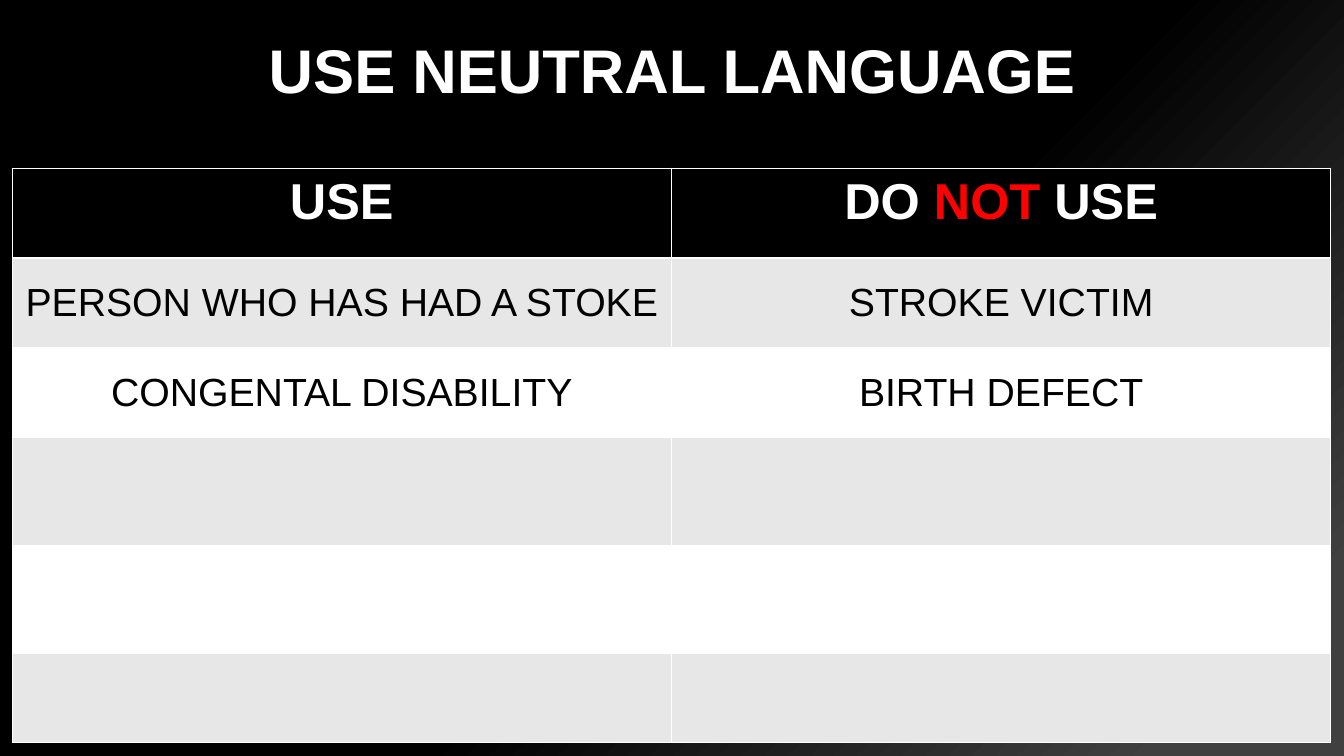
from lxml.etree import SubElement
from pptx import Presentation
from pptx.dml.color import RGBColor
from pptx.enum.text import MSO_ANCHOR, PP_ALIGN
from pptx.oxml.ns import qn
from pptx.util import Inches, Pt

COLORS = {
    "black": "000000",
    "charcoal": "404040",
    "white": "FFFFFF",
    "band": "E7E7E7",
    "alert": "FF0000",
}
FONT = "Arial"
WIDTH, HEIGHT = Inches(13.33), Inches(7.5)

HEADINGS = [
    [("USE", "white")],
    [("DO ", "white"), ("NOT", "alert"), (" USE", "white")],
]
PHRASES = [
    ("PERSON WHO HAS HAD A STOKE", "STROKE VICTIM"),
    ("CONGENTAL DISABILITY", "BIRTH DEFECT"),
    ("", ""),
    ("", ""),
    ("", ""),
]
ROW_HEIGHTS = [0.89, 0.89, 0.89, 1.07, 1.07, 0.89]


def color(name):
    return RGBColor.from_string(COLORS[name])


class SlideBuilder:
    def __init__(self, presentation):
        self.slide = presentation.slides.add_slide(presentation.slide_layouts[5])

    def background(self, start, end):
        """Shade diagonally between two (color name, position) stops."""
        fill = self.slide.background.fill
        fill.gradient()
        fill.gradient_angle = 315
        for stop, (name, position) in zip(fill.gradient_stops, (start, end)):
            stop.color.rgb = color(name)
            stop.position = position

    def centred_text(self, text_frame, parts, size, bold=False):
        """Fill a centred paragraph with (text, color name) runs."""
        paragraph = text_frame.paragraphs[0]
        paragraph.alignment = PP_ALIGN.CENTER
        for text, name in parts:
            run = paragraph.add_run()
            run.text = text
            run.font.name = FONT
            run.font.size = Pt(size)
            run.font.bold = bold
            run.font.color.rgb = color(name)
        return paragraph

    def title(self, text, left, top, width, height):
        """Place the title; lengths are shares of the slide's size."""
        shape = self.slide.shapes.title
        shape.left, shape.width = int(left * WIDTH), int(width * WIDTH)
        shape.top, shape.height = int(top * HEIGHT), int(height * HEIGHT)
        shape.text_frame.vertical_anchor = MSO_ANCHOR.MIDDLE
        paragraph = self.centred_text(shape.text_frame, [(text, "white")], 44, bold=True)
        paragraph.line_spacing = 0.9

    def border(self, cell):
        properties = cell._tc.get_or_add_tcPr()
        for index, side in enumerate(("lnL", "lnR", "lnT", "lnB")):
            line = SubElement(properties, qn(f"a:{side}"), w=str(Pt(1)))
            fill = SubElement(line, qn("a:solidFill"))
            SubElement(fill, qn("a:srgbClr"), val=COLORS["white"])
            properties.insert(index, line)

    def style_cell(self, cell, fill_name):
        cell.fill.solid()
        cell.fill.fore_color.rgb = color(fill_name)
        self.border(cell)

    def table(self, headings, phrases, row_heights, left, top, width):
        """Place the table; lengths are shares of the slide's size."""
        frame = self.slide.shapes.add_table(
            len(row_heights), len(headings),
            int(left * WIDTH), int(top * HEIGHT),
            int(width * WIDTH), Inches(sum(row_heights)))
        table = frame.table
        for row, height in zip(table.rows, row_heights):
            row.height = Inches(height)
        for column, heading in enumerate(headings):
            cell = table.cell(0, column)
            self.style_cell(cell, "black")
            self.centred_text(cell.text_frame, heading, 36, bold=True)
        for row, texts in enumerate(phrases, start=1):
            for column, text in enumerate(texts):
                cell = table.cell(row, column)
                self.style_cell(cell, "band" if row % 2 else "white")
                if text:
                    cell.vertical_anchor = MSO_ANCHOR.MIDDLE
                    self.centred_text(cell.text_frame, [(text, "black")], 28)


def main():
    presentation = Presentation()
    presentation.slide_width, presentation.slide_height = WIDTH, HEIGHT
    builder = SlideBuilder(presentation)
    builder.background(("black", 0.56), ("charcoal", 0.91))
    builder.title("USE NEUTRAL LANGUAGE", 1.01 / 13.33, 0, 11.32 / 13.33, 1.45 / 7.5)
    builder.table(HEADINGS, PHRASES, ROW_HEIGHTS, 0.12 / 13.33, 1.67 / 7.5, 13.08 / 13.33)
    presentation.save("out.pptx")


if __name__ == "__main__":
    main()
